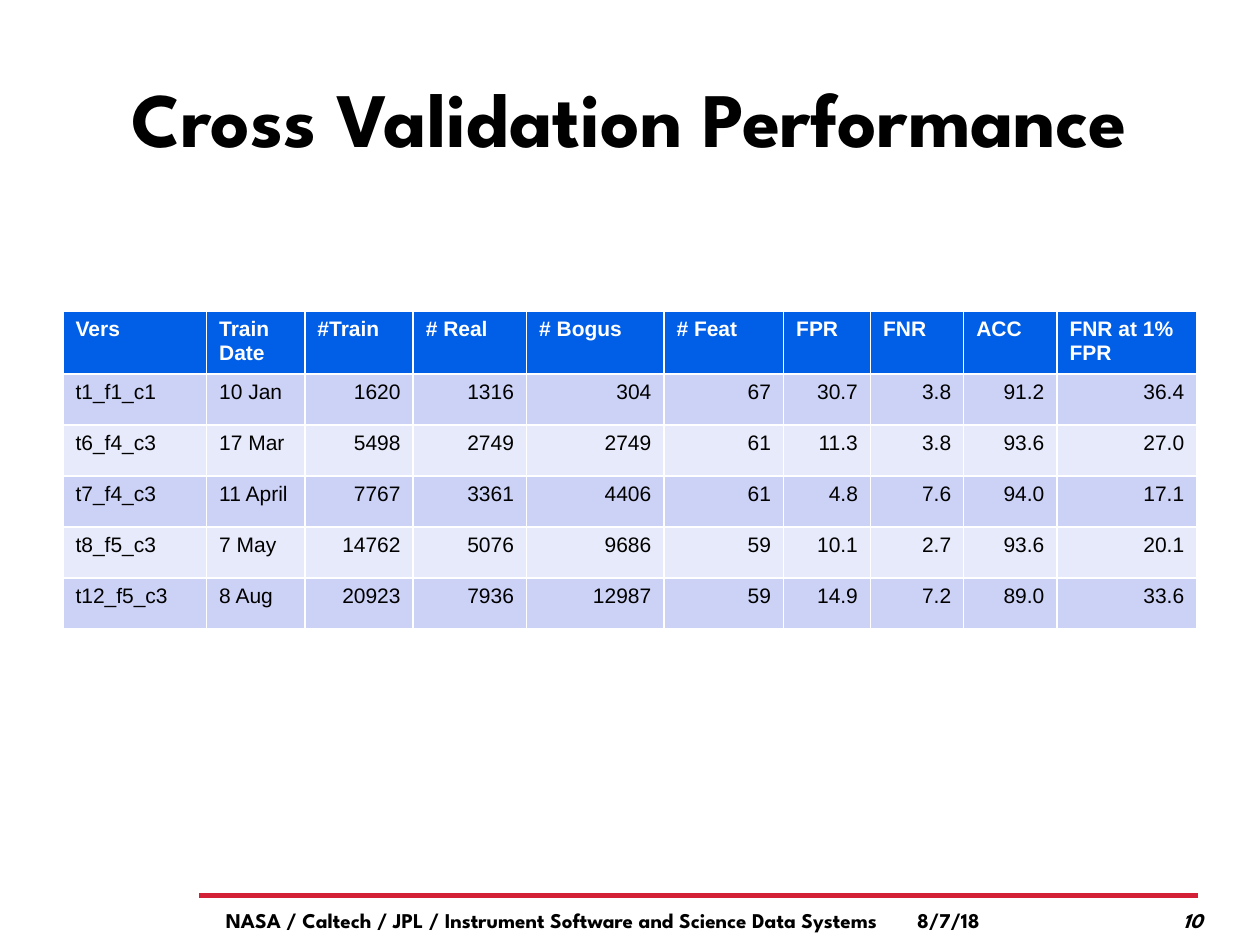
from pptx import Presentation
from pptx.dml.color import RGBColor
from pptx.enum.shapes import MSO_CONNECTOR
from pptx.enum.text import MSO_ANCHOR, PP_ALIGN
from pptx.oxml.ns import qn
from pptx.util import Inches, Pt
from lxml.etree import SubElement

BLACK = RGBColor(0x00, 0x00, 0x00)
WHITE = RGBColor(0xFF, 0xFF, 0xFF)
RED = RGBColor(0xD3, 0x20, 0x37)
HEADER_BLUE = RGBColor(0x00, 0x5E, 0xE7)
BANDS = [RGBColor(0xCC, 0xD2, 0xF6), RGBColor(0xE7, 0xEA, 0xFA)]

deck = Presentation()
deck.slide_width, deck.slide_height = Inches(10), Inches(7.5)
page = deck.slides.add_slide(deck.slide_layouts[6])


def percent(*lengths):
    sides = (deck.slide_width, deck.slide_height)
    return [int(sides[i % 2] * length / 100) for i, length in enumerate(lengths)]


def write(para, text, align, color, formats):
    para.alignment = align
    span = para.add_run()
    span.text = text
    for name, value in formats.items():
        setattr(span.font, name, value)
    span.font.color.rgb = color


rule = page.shapes.add_connector(MSO_CONNECTOR.STRAIGHT, *percent(15.8, 94.8, 95.1, 94.8))
rule.line.color.rgb = RED
rule.line.width = Pt(3)
SubElement(rule._element.spPr, qn("a:effectLst"))

FOOTER_TOP, FOOTER_HEIGHT = 94.67, 5.33
heading = {"name": "League Spartan", "size": Pt(44), "bold": True}
footer = {**heading, "size": Pt(12)}
texts = [
    ("Cross Validation Performance", (5, 4, 90, 16.67), PP_ALIGN.CENTER, heading),
    ("8/7/18", (71.8, FOOTER_TOP, 23.3, FOOTER_HEIGHT), PP_ALIGN.LEFT, footer),
    ("NASA / Caltech / JPL / Instrument Software and Science Data Systems",
     (13.5, FOOTER_TOP, 60.6, FOOTER_HEIGHT), PP_ALIGN.CENTER, footer),
    ("10", (73.1, FOOTER_TOP, 23.3, FOOTER_HEIGHT), PP_ALIGN.RIGHT, {**footer, "italic": True}),
]
for text, area, align, formats in texts:
    box = page.shapes.add_textbox(*percent(*area))
    box.text_frame.word_wrap = True
    box.text_frame.vertical_anchor = MSO_ANCHOR.MIDDLE
    write(box.text_frame.paragraphs[0], text, align, BLACK, formats)

results = [
    ["Vers", "Train Date", "#Train", "# Real", "# Bogus", "# Feat", "FPR", "FNR", "ACC", "FNR at 1% FPR"],
    ["t1_f1_c1", "10 Jan", "1620", "1316", "304", "67", "30.7", "3.8", "91.2", "36.4"],
    ["t6_f4_c3", "17 Mar", "5498", "2749", "2749", "61", "11.3", "3.8", "93.6", "27.0"],
    ["t7_f4_c3", "11 April", "7767", "3361", "4406", "61", "4.8", "7.6", "94.0", "17.1"],
    ["t8_f5_c3", "7 May", "14762", "5076", "9686", "59", "10.1", "2.7", "93.6", "20.1"],
    ["t12_f5_c3", "8 Aug", "20923", "7936", "12987", "59", "14.9", "7.2", "89.0", "33.6"],
]
column_shares = [11.4, 7.8, 8.6, 9, 10.9, 9.5, 6.9, 7.4, 7.4, 11.1]
ROW_SHARE = 5.4
table = page.shapes.add_table(
    len(results), len(column_shares), *percent(5, 32.93, 90, ROW_SHARE * len(results))
).table
for column, share in zip(table.columns, column_shares):
    column.width = percent(share)[0]

for r, record in enumerate(results):
    is_header = r == 0
    for c, text in enumerate(record):
        cell = table.cell(r, c)
        cell.fill.solid()
        cell.fill.fore_color.rgb = HEADER_BLUE if is_header else BANDS[(r - 1) % 2]
        align = PP_ALIGN.LEFT if is_header or c < 2 else PP_ALIGN.RIGHT
        write(cell.text_frame.paragraphs[0], text, align, WHITE if is_header else BLACK,
              {"name": "Arial", "size": Pt(12), "bold": is_header})

deck.save("out.pptx")
